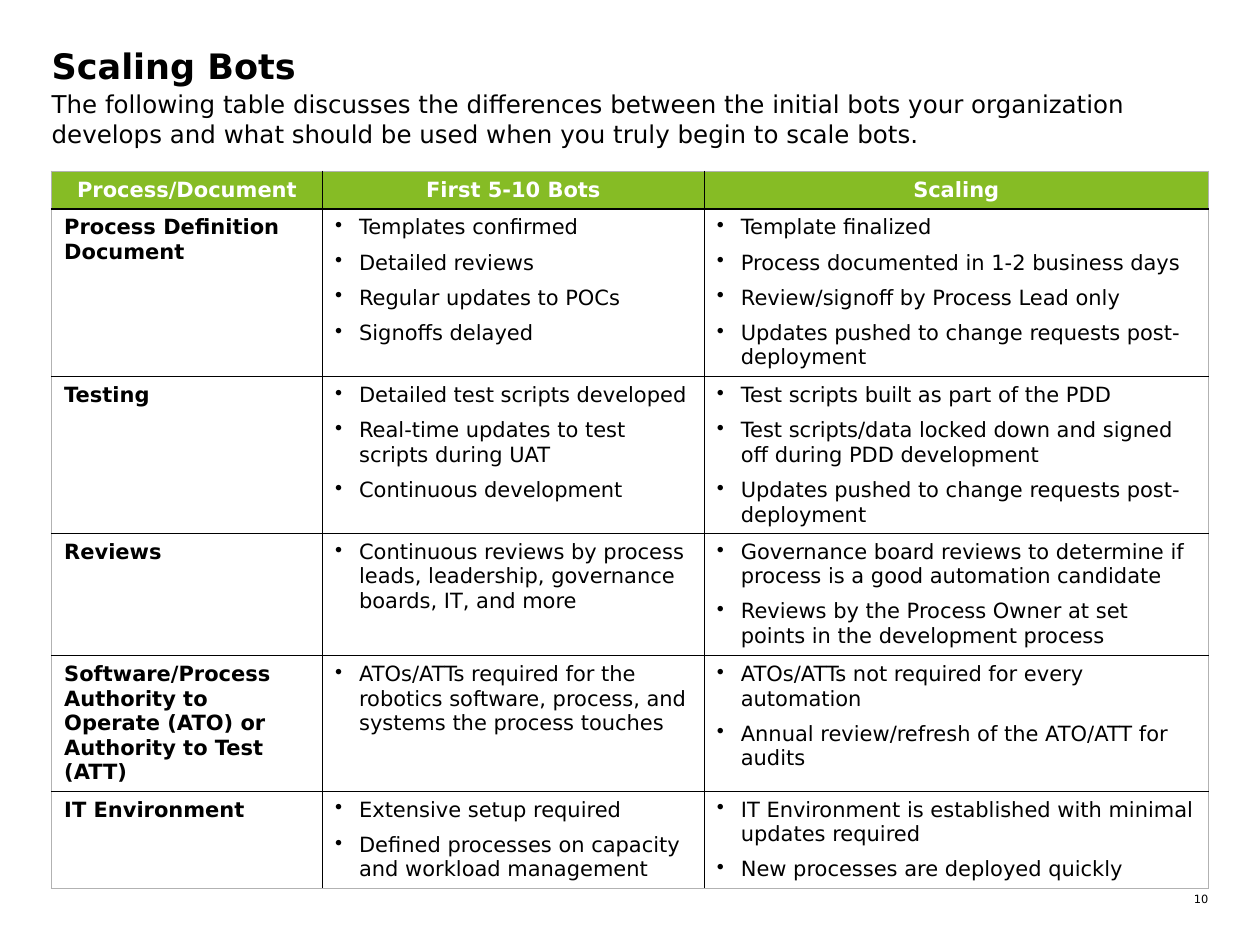
from lxml.etree import SubElement
from pptx import Presentation
from pptx.dml.color import RGBColor
from pptx.enum.text import MSO_ANCHOR, MSO_AUTO_SIZE, PP_ALIGN
from pptx.oxml.ns import qn
from pptx.util import Inches, Pt

COLORS = {"text": "000000", "header_text": "FFFFFF", "header": "86BC25",
          "grid": "000000", "frame": "B2B2B2"}
FONT = "DejaVu Sans"
LEFT, WIDTH = 0.41, 9.18
COLUMN_WIDTHS = [2.15, 3.03, 4.0]
ROW_HEIGHTS = [0.3, 1.33, 1.24, 0.97, 1.07, 0.77]
HEADINGS = ["Process/Document", "First 5-10 Bots", "Scaling"]
COMPARISON = [
    ("Process Definition Document",
     ["Templates confirmed", "Detailed reviews", "Regular updates to POCs", "Signoffs delayed"],
     ["Template finalized", "Process documented in 1-2 business days",
      "Review/signoff by Process Lead only",
      "Updates pushed to change requests post-deployment"]),
    ("Testing",
     ["Detailed test scripts developed", "Real-time updates to test scripts during UAT",
      "Continuous development"],
     ["Test scripts built as part of the PDD",
      "Test scripts/data locked down and signed off during PDD development",
      "Updates pushed to change requests post-deployment"]),
    ("Reviews",
     ["Continuous reviews by process leads, leadership, governance boards, IT, and more"],
     ["Governance board reviews to determine if process is a good automation candidate",
      "Reviews by the Process Owner at set points in the development process"]),
    ("Software/Process Authority to Operate (ATO) or Authority to Test (ATT)",
     ["ATOs/ATTs required for the robotics software, process, and systems the process touches"],
     ["ATOs/ATTs not required for every automation",
      "Annual review/refresh of the ATO/ATT for audits"]),
    ("IT Environment",
     ["Extensive setup required",
      "Defined processes on capacity and workload management"],
     ["IT Environment is established with minimal updates required",
      "New processes are deployed quickly"]),
]


def write(frame, lines, size, color="text", bold=False, align=PP_ALIGN.LEFT, after=0,
          bullet=None):
    frame.text = "\n".join(lines)
    for paragraph in frame.paragraphs:
        properties = paragraph._p.get_or_add_pPr()
        indent = Inches(0.19) if bullet else 0
        properties.set("marL", str(indent))
        properties.set("indent", str(-indent))
        if bullet:
            SubElement(properties, qn("a:buChar"), char=bullet)
        else:
            SubElement(properties, qn("a:buNone"))
        paragraph.alignment = align
        paragraph.space_before = Pt(0)
        paragraph.space_after = Pt(after)
        for run in paragraph.runs:
            for name, value in {"name": FONT, "size": Pt(size), "bold": bold}.items():
                setattr(run.font, name, value)
            run.font.color.rgb = RGBColor.from_string(COLORS[color])


def add_border(cell, side, color):
    line = SubElement(cell._tc.get_or_add_tcPr(), qn(f"a:ln{side}"), w=str(Pt(1)))
    SubElement(SubElement(line, qn("a:solidFill")), qn("a:srgbClr"), val=COLORS[color])


presentation = Presentation()
presentation.slide_width = Inches(10)
presentation.slide_height = Inches(7.5)
slide = presentation.slides.add_slide(presentation.slide_layouts[1])

title = slide.shapes.title
introduction = slide.placeholders[1]
page_number = slide.shapes.add_textbox(0, 0, 0, 0)
texts = [
    (title, (LEFT, 0.35, WIDTH, 0.37), "Scaling Bots", {"size": 20, "bold": True}),
    (introduction, (LEFT, 0.71, WIDTH, 0.83),
     "The following table discusses the differences between the initial bots your "
     "organization develops and what should be used when you truly begin to scale bots.",
     {"size": 14, "after": 10}),
    (page_number, (9.34, 7.08, 0.25, 0.11), "10", {"size": 6.5, "align": PP_ALIGN.RIGHT}),
]
for part, place, wording, style in texts:
    part.left, part.top, part.width, part.height = [Inches(length) for length in place]
    frame_format = {"margin_left": 0, "margin_top": 0, "margin_right": 0, "margin_bottom": 0,
                    "word_wrap": True, "auto_size": MSO_AUTO_SIZE.NONE,
                    "vertical_anchor": MSO_ANCHOR.TOP}
    for name, value in frame_format.items():
        setattr(part.text_frame, name, value)
    write(part.text_frame, [wording], **style)

table = slide.shapes.add_table(
    len(ROW_HEIGHTS), len(COLUMN_WIDTHS), Inches(LEFT), Inches(1.36),
    Inches(WIDTH), Inches(sum(ROW_HEIGHTS))).table
table.horz_banding = False
for column, width in zip(table.columns, COLUMN_WIDTHS):
    column.width = Inches(width)
for row, height in zip(table.rows, ROW_HEIGHTS):
    row.height = Inches(height)

last_row, last_column = len(ROW_HEIGHTS) - 1, len(COLUMN_WIDTHS) - 1
for r, contents in enumerate([HEADINGS, *COMPARISON]):
    for c, content in enumerate(contents):
        cell = table.cell(r, c)
        edges = {"L": c == 0, "R": c == last_column, "T": r == 0, "B": r == last_row}
        for side, outer in edges.items():
            add_border(cell, side, "frame" if outer else "grid")
        if r == 0:
            cell.fill.solid()
            cell.fill.fore_color.rgb = RGBColor.from_string(COLORS["header"])
            write(cell.text_frame, [content], 12, "header_text", True, PP_ALIGN.CENTER, 6)
        else:
            cell.fill.background()
            if c == 0:
                write(cell.text_frame, [content], 12, bold=True, after=6)
            else:
                write(cell.text_frame, content, 12, after=6, bullet="•")

presentation.save("out.pptx")
